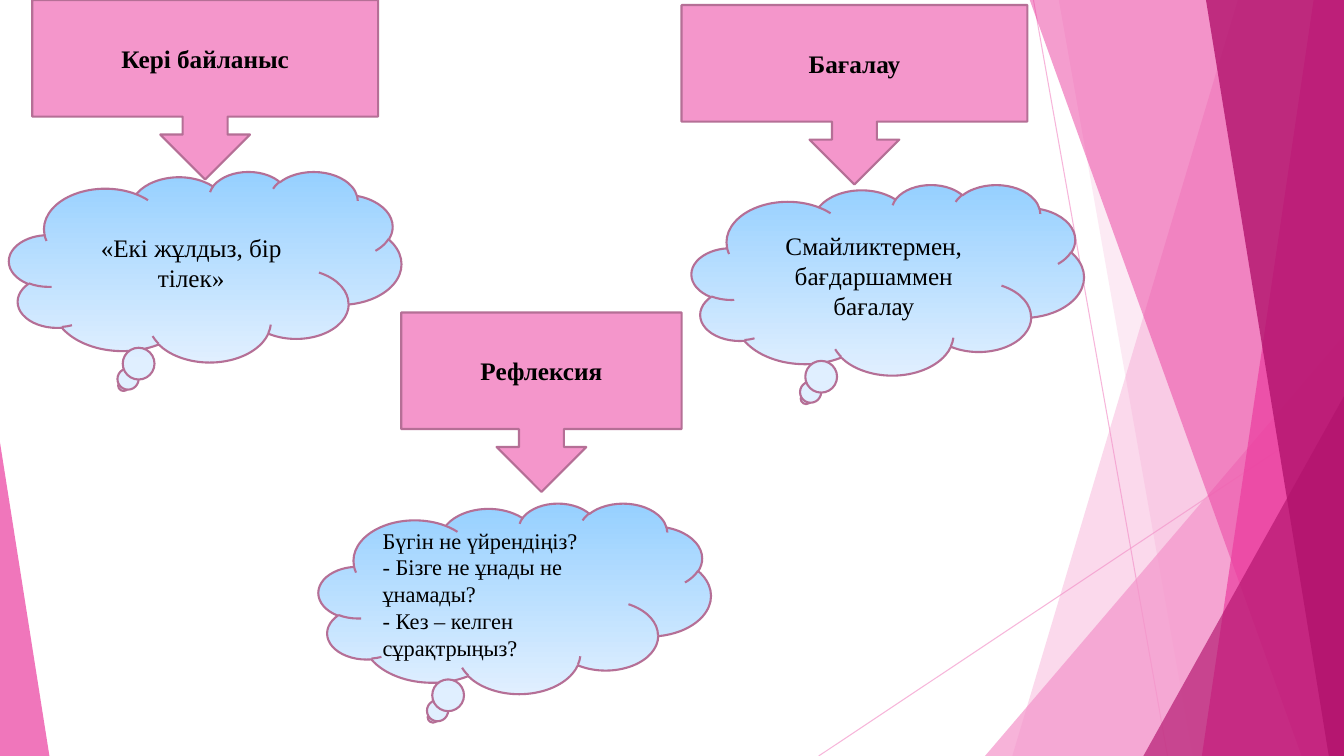
"""Build a slide of three callouts with thought clouds over pink facets."""
from dataclasses import dataclass

from pptx import Presentation
from pptx import util as u
from pptx.dml.color import RGBColor
from pptx.enum import shapes, text
from pptx.oxml import ns, xmlchemy

PINK, ROSE, PLUM = "F496CB", "EB3D9F", "B2136D"
OUTLINE, SKY, MIST, BLACK = "B56F96", "96D0FF", "E0EFFF", "000000"
FONT = "Times New Roman"
WIDTH, HEIGHT, TOP = 13.33, 7.5, -0.01
CLOUD_SIZE = (3.89, 1.89)
CALLOUT_HEIGHT = 1.78


@dataclass
class Ray:
    start: tuple[float, float]
    end: tuple[float, float]


@dataclass
class Ribbon:
    top_left: float
    bottom_left: float
    color: str
    opacity: int


@dataclass
class Wedge:
    left: float
    top: float
    width: float
    apex: float
    color: str
    opacity: int


@dataclass
class Topic:
    title: str
    callout: tuple[float, float]
    callout_width: float
    cloud: tuple[float, float]
    lines: list[str]
    size: int = 18
    align: text.PP_ALIGN = text.PP_ALIGN.CENTER


FACETS = [
    Ray((10.25, 0), (11.58, HEIGHT)),
    Ray((WIDTH, 4.03), (8.12, HEIGHT)),
    Ribbon(12.28, 10.04, PINK, 36),
    Ribbon(10.5, 11.83, PINK, 20),
    Wedge(9.77, 3.33, 3.56, 1, PINK, 72),
    Ribbon(10.21, 12.91, ROSE, 50),
    Ribbon(13.03, 11.92, ROSE, 70),
    Ribbon(11.96, 13.18, PLUM, 80),
    Wedge(11.34, 3.93, 1.99, 1, PLUM, 66),
    Wedge(0, 4.39, 0.49, 0, ROSE, 70),
]

TOPICS = [
    Topic("Бағалау", (6.76, 0.05), 3.43, (6.86, 1.83),
          ["Смайликтермен, бағдаршаммен бағалау"]),
    Topic("Кері байланыс", (0.32, 0), 3.43, (0.09, 1.7),
          ["«Екі жұлдыз, бір тілек»"]),
    Topic("Рефлексия", (3.98, 3.1), 2.78, (3.16, 4.99),
          ["Бүгін не үйрендіңіз?", "- Бізге не ұнады не ұнамады?",
           "- Кез – келген сұрақтрыңыз?"], 16, text.PP_ALIGN.LEFT),
]


def rgb(color: str) -> RGBColor:
    return RGBColor.from_string(color)


def set_opacity(shape, percent: int) -> None:
    for tint in shape.element.spPr.iter(ns.qn("a:srgbClr")):
        alpha = xmlchemy.OxmlElement("a:alpha")
        alpha.set("val", str(percent * 1000))
        tint.append(alpha)


def paint_facet(shape, color: str, opacity: int) -> None:
    shape.shadow.inherit = False
    shape.fill.solid()
    shape.fill.fore_color.rgb = rgb(color)
    shape.line.fill.background()
    set_opacity(shape, opacity)


def draw_ray(page, ray: Ray) -> None:
    line = page.shapes.add_connector(
        shapes.MSO_CONNECTOR.STRAIGHT,
        *(u.Inches(value) for value in ray.start + ray.end))
    line.line.color.rgb = rgb(PINK)
    line.line.width = u.Pt(0.75)
    set_opacity(line, 70)
    line.element.spPr.append(xmlchemy.OxmlElement("a:effectLst"))


def draw_ribbon(page, ribbon: Ribbon) -> None:
    corners = [(ribbon.top_left, TOP), (WIDTH, TOP), (WIDTH, HEIGHT),
               (ribbon.bottom_left, HEIGHT)]
    points = [(u.Inches(x), u.Inches(y)) for x, y in corners]
    builder = page.shapes.build_freeform(*points[0])
    builder.add_line_segments(points[1:], close=True)
    paint_facet(builder.convert_to_shape(), ribbon.color, ribbon.opacity)


def draw_wedge(page, wedge: Wedge) -> None:
    triangle = page.shapes.add_shape(
        shapes.MSO_SHAPE.ISOSCELES_TRIANGLE,
        u.Inches(wedge.left), u.Inches(wedge.top),
        u.Inches(wedge.width), u.Inches(HEIGHT - wedge.top))
    triangle.adjustments[0] = wedge.apex
    paint_facet(triangle, wedge.color, wedge.opacity)


def add_bubble(page, kind, place: tuple[float, float],
               size: tuple[float, float], lines: list[str], points: int,
               align: text.PP_ALIGN, bold: bool):
    box = page.shapes.add_shape(
        kind, *(u.Inches(value) for value in place + size))
    box.shadow.inherit = False
    box.line.color.rgb = rgb(OUTLINE)
    box.line.width = u.Pt(1.5)
    frame = box.text_frame
    frame.word_wrap = True
    frame.vertical_anchor = text.MSO_ANCHOR.MIDDLE
    frame.text = "\n".join(lines)
    for para in frame.paragraphs:
        para.alignment = align
        for span in para.runs:
            span.font.name = FONT
            span.font.size = u.Pt(points)
            span.font.bold = bold
            span.font.color.rgb = rgb(BLACK)
    return box


def draw_topic(page, topic: Topic) -> None:
    callout = add_bubble(
        page, shapes.MSO_SHAPE.DOWN_ARROW_CALLOUT, topic.callout,
        (topic.callout_width, CALLOUT_HEIGHT), [topic.title], 18,
        text.PP_ALIGN.CENTER, True)
    callout.fill.solid()
    callout.fill.fore_color.rgb = rgb(PINK)
    cloud = add_bubble(
        page, shapes.MSO_SHAPE.CLOUD_CALLOUT, topic.cloud, CLOUD_SIZE,
        topic.lines, topic.size, topic.align, False)
    cloud.fill.gradient()
    cloud.fill.gradient_angle = 270
    for stop, color in zip(cloud.fill.gradient_stops, (SKY, MIST)):
        stop.color.rgb = rgb(color)


def main() -> None:
    deck = Presentation()
    deck.slide_width, deck.slide_height = u.Inches(WIDTH), u.Inches(HEIGHT)
    page = deck.slides.add_slide(deck.slide_layouts[6])
    painters = {Ray: draw_ray, Ribbon: draw_ribbon, Wedge: draw_wedge}
    for facet in FACETS:
        painters[type(facet)](page, facet)
    for topic in TOPICS:
        draw_topic(page, topic)
    deck.save("out.pptx")


if __name__ == "__main__":
    main()
